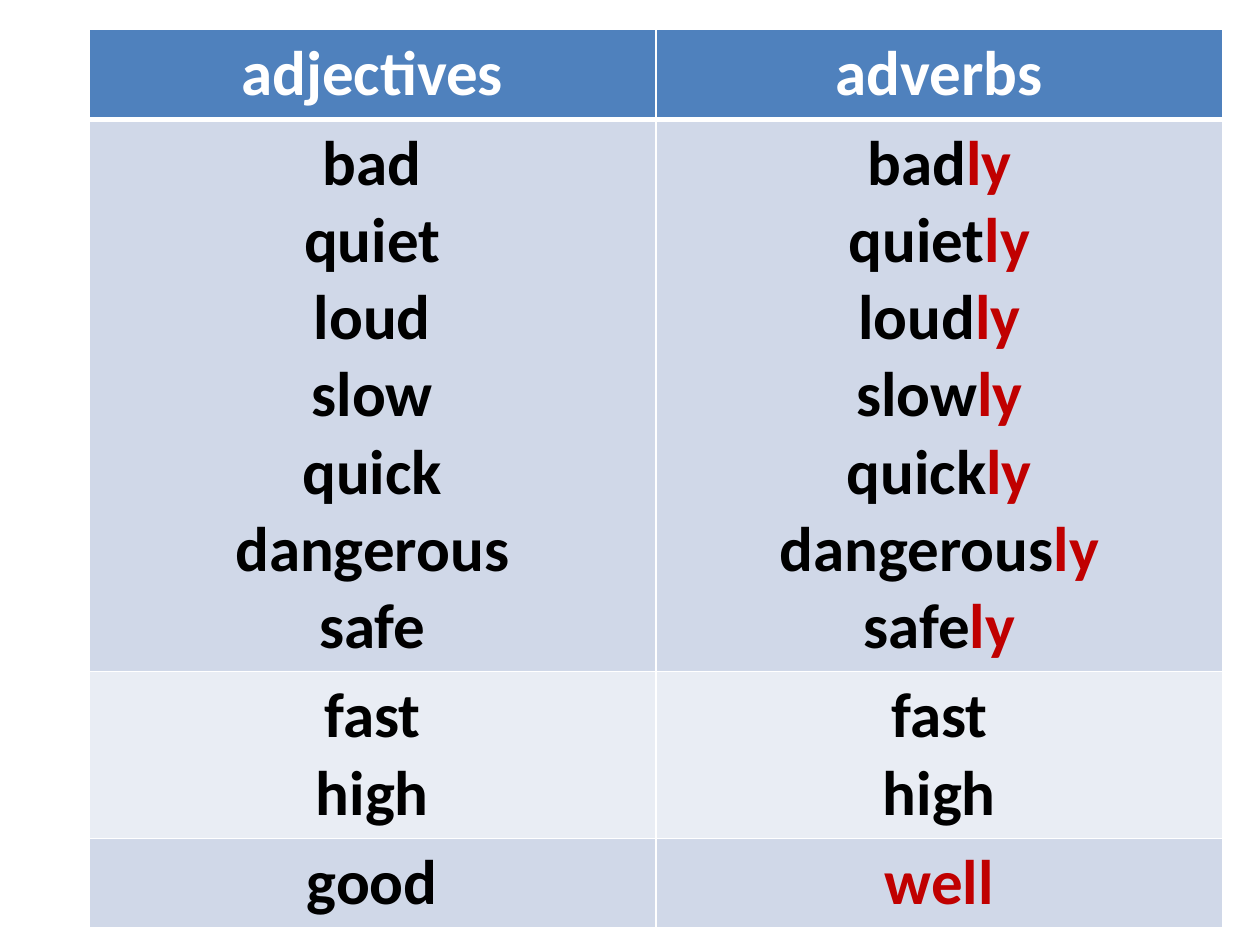
from lxml.etree import SubElement
from pptx import Presentation
from pptx.dml.color import RGBColor
from pptx.enum.text import PP_ALIGN
from pptx.oxml.ns import qn
from pptx.util import Pt

COLORS = {
    "header": "4F81BD",
    "band_dark": "D0D8E8",
    "band_light": "E9EDF4",
    "white": "FFFFFF",
    "black": "000000",
    "accent": "C00000",
}
LINE_HEIGHT = 44
CELL_PADDING = 7

REGULAR = ["bad", "quiet", "loud", "slow", "quick", "dangerous", "safe"]
UNCHANGED = ["fast", "high"]

# Each row: fill, adjective lines, adverb lines; a line is a list of (text, color)
ROWS = [
    ("header", [[("adjectives", "white")]], [[("adverbs", "white")]]),
    ("band_dark",
     [[(word, "black")] for word in REGULAR],
     [[(word, "black"), ("ly", "accent")] for word in REGULAR]),
    ("band_light", *[[[(word, "black")] for word in UNCHANGED]] * 2),
    ("band_dark", [[("good", "black")]], [[("well", "accent")]]),
]


def add_text(paragraph, text, *, color, size=36, font="Calibri", bold=True):
    run = paragraph.add_run()
    run.text = text
    run.font.name = font
    run.font.size = Pt(size)
    run.font.bold = bold
    run.font.color.rgb = RGBColor.from_string(COLORS[color])


def set_borders(cell, **widths):
    """Draw white borders; must run before the fill, which follows them in the XML."""
    properties = cell._tc.get_or_add_tcPr()
    for side, width in widths.items():
        border = SubElement(properties, qn(f"a:ln{side}"), w=str(Pt(width)))
        fill = SubElement(border, qn("a:solidFill"))
        SubElement(fill, qn("a:srgbClr"), val=COLORS["white"])


def fill_cell(cell, lines, fill, top, bottom):
    set_borders(cell, L=1, R=1, T=top, B=bottom)
    cell.fill.solid()
    cell.fill.fore_color.rgb = RGBColor.from_string(COLORS[fill])
    for index, line in enumerate(lines):
        frame = cell.text_frame
        paragraph = frame.add_paragraph() if index else frame.paragraphs[0]
        paragraph.alignment = PP_ALIGN.CENTER
        for text, color in line:
            add_text(paragraph, text, color=color)


def add_word_table(slide, left, top, width):
    heights = [len(adjectives) * LINE_HEIGHT + CELL_PADDING
               for _, adjectives, _ in ROWS]
    table = slide.shapes.add_table(
        len(ROWS), 2, Pt(left), Pt(top), Pt(width), Pt(sum(heights))).table
    for index, (fill, *columns) in enumerate(ROWS):
        table.rows[index].height = Pt(heights[index])
        # A thick rule separates the header from the words
        top_width = 3 if index == 1 else 1
        bottom_width = 3 if index == 0 else 1
        for column, lines in enumerate(columns):
            fill_cell(table.cell(index, column), lines, fill,
                      top_width, bottom_width)


def main():
    deck = Presentation()
    deck.slide_width, deck.slide_height = Pt(720), Pt(540)
    slide = deck.slides.add_slide(deck.slide_layouts[6])
    # Adjectives and their adverbs
    add_word_table(slide, left=50.75, top=16.9, width=648)
    deck.save("out.pptx")


if __name__ == "__main__":
    main()
